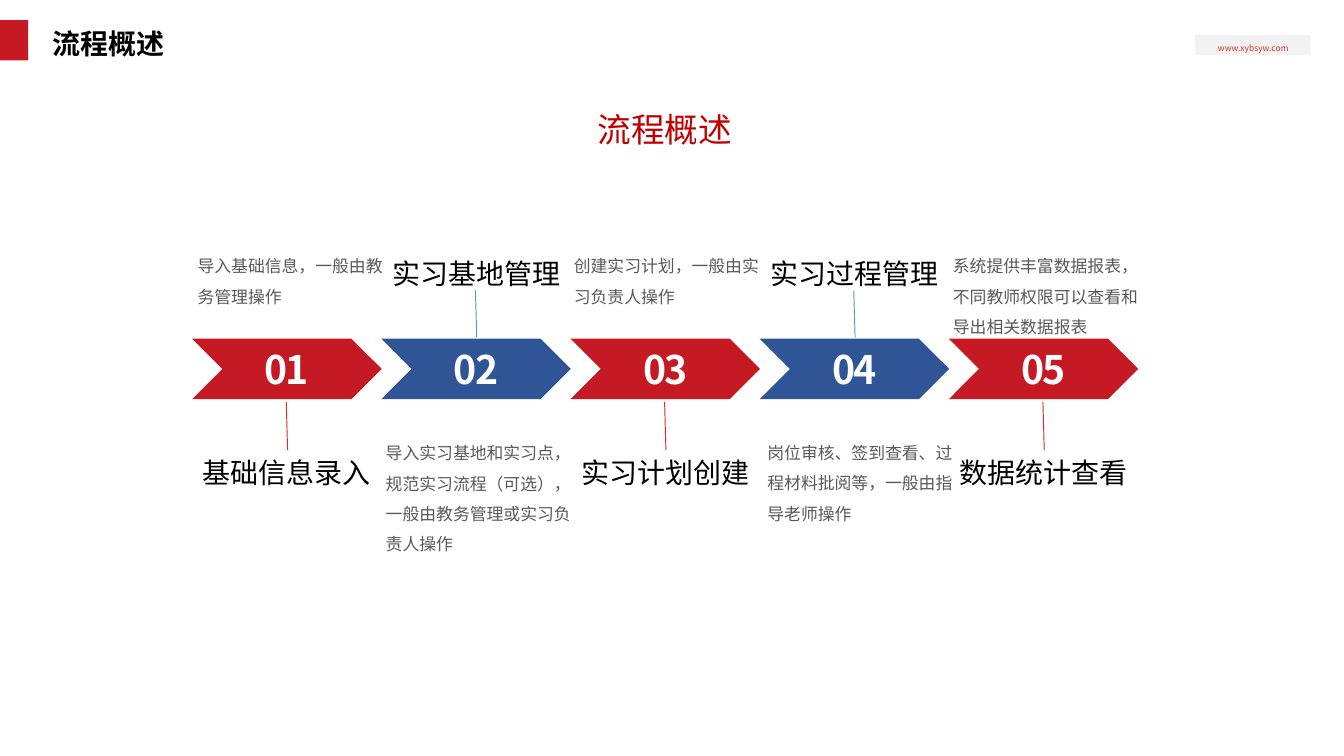
from dataclasses import dataclass
from lxml import etree
from pptx import Presentation
from pptx.dml.color import RGBColor
from pptx.enum.shapes import MSO_CONNECTOR as Link, MSO_SHAPE as Shape
from pptx.enum.text import MSO_ANCHOR as Anchor, MSO_AUTO_SIZE as Fit, PP_ALIGN as Align
from pptx.oxml.ns import qn
from pptx.util import Inches, Pt


@dataclass
class Theme:
    font: str = "Noto Sans CJK SC"
    red: str = "C51A24"
    blue: str = "2F5597"
    black: str = "000000"
    white: str = "FFFFFF"
    gray: str = "595959"
    pale: str = "F2F2F2"
    site: str = "D62F2F"
    head: str = "C00000"
    red_line: str = "D92C21"
    blue_line: str = "6095C9"
    tiny: float = 4.5
    note: float = 9
    label: float = 15
    large: float = 18
    number: float = 21


def fill(kind, left, top, width, height, color):
    shape = slide.shapes.add_shape(kind, Inches(left), Inches(top), Inches(width), Inches(height))
    shape.shadow.inherit = False
    shape.fill.solid()
    shape.fill.fore_color.rgb = RGBColor.from_string(color)
    shape.line.fill.background()


def write(text, left, top, width, height, size, color, align=Align.CENTER,
          bold=False, pad=(0.05, 0.04), box=None):
    box = box or slide.shapes.add_textbox(0, 0, 0, 0)
    box.left, box.top, box.width, box.height = map(Inches, (left, top, width, height))
    frame = box.text_frame
    frame.text = text
    frame.word_wrap = True
    frame.auto_size = Fit.NONE
    frame.vertical_anchor = Anchor.TOP
    frame.margin_left = frame.margin_right = Inches(pad[0])
    frame.margin_top = frame.margin_bottom = Inches(pad[1])
    para = frame.paragraphs[0]
    para.alignment = align
    run = para.runs[0]
    run.font.size = Pt(size)
    run.font.bold = bold
    run.font.name = theme.font
    run.font.color.rgb = RGBColor.from_string(color)
    etree.SubElement(run.font._element, qn("a:ea")).set("typeface", theme.font)
    return para


theme = Theme()
deck = Presentation()
deck.slide_width = Inches(10)
deck.slide_height = Inches(10 * 9 / 16)
slide = deck.slides.add_slide(deck.slide_layouts[5])

fill(Shape.RECTANGLE, 8.89, 0.26, 0.86, 0.15, theme.pale)
write("www.xybsyw.com", 9, 0.27, 0.65, 0.18, theme.tiny, theme.site, pad=(0.05, 0.05))
fill(Shape.RECTANGLE, 0, 0.15, 0.21, 0.3, theme.red)
write("流程概述", 0.34, 0.15, 2.93, 0.35, theme.label, theme.black,
      Align.LEFT, True, (0.05, 0.05), slide.shapes.title)
write("流程概述", 3.04, 0.77, 3.81, 0.38, theme.large, theme.head)

steps = [
    ("基础信息录入", "导入基础信息，一般由教务管理操作", 1.42, 1.55, 0.53),
    ("实习基地管理", "导入实习基地和实习点，规范实习流程（可选），一般由教务管理或实习负责人操作",
     2.82, 1.59, 0.98),
    ("实习计划创建", "创建实习计划，一般由实习负责人操作", 4.22, 1.56, 0.53),
    ("实习过程管理", "岗位审核、签到查看、过程材料批阅等，一般由指导老师操作", 5.66, 1.52, 0.76),
    ("数据统计查看", "系统提供丰富数据报表，不同教师权限可以查看和导出相关数据报表", 7.04, 1.58, 0.76),
]
first, last = 1.43, 7.06
pitch = (last - first) / (len(steps) - 1)

for i, (name, note, left, width, height) in enumerate(steps):
    x = first + i * pitch
    if i % 2:
        color, line, label_y, note_y, start, end = theme.blue, theme.blue_line, 1.87, 3.18, 2.16, 2.51
    else:
        color, line, label_y, note_y, start, end = theme.red, theme.red_line, 3.35, 1.79, 2.99, 3.35
    fill(Shape.CHEVRON, x, 2.52, 1.41, 0.45, color)
    digits = write(f"{i + 1:02}", x + 0.53, 2.57, 0.35, 0.35, theme.number, theme.white,
                   bold=True, pad=(0, 0))
    digits.runs[0].font._element.set("spc", "-110")
    write(name, x - 0.04, label_y, 1.49, 0.33, theme.label, theme.black)
    write(note, left, note_y, width, height, theme.note, theme.gray, Align.LEFT).line_spacing = 1.5
    link = slide.shapes.add_connector(Link.STRAIGHT, Inches(x + 0.7), Inches(start),
                                      Inches(x + 0.71), Inches(end))
    link.line.color.rgb = RGBColor.from_string(line)
    link.line.width = Pt(0.5)
    etree.SubElement(link._element.spPr, qn("a:effectLst"))

deck.save("out.pptx")
